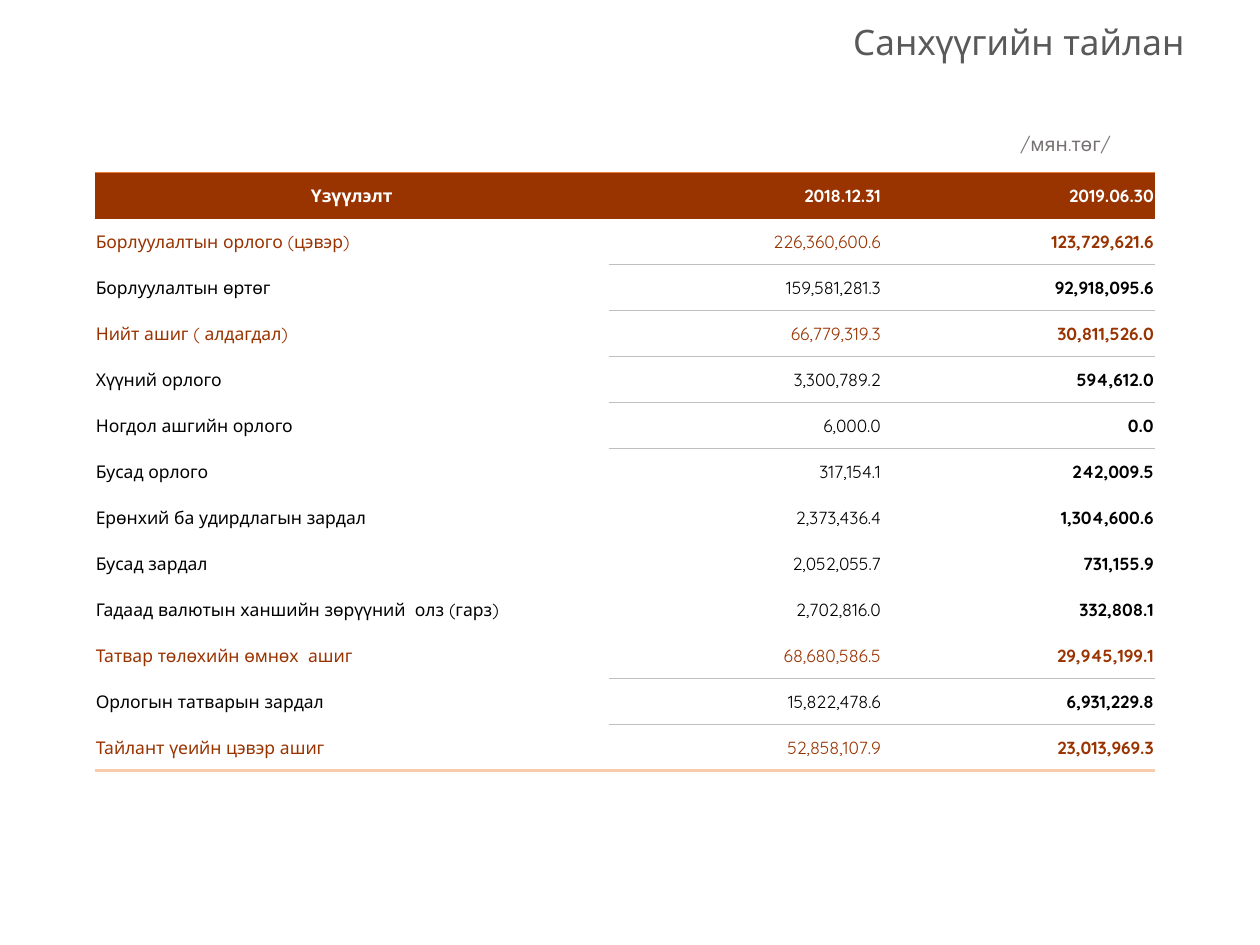
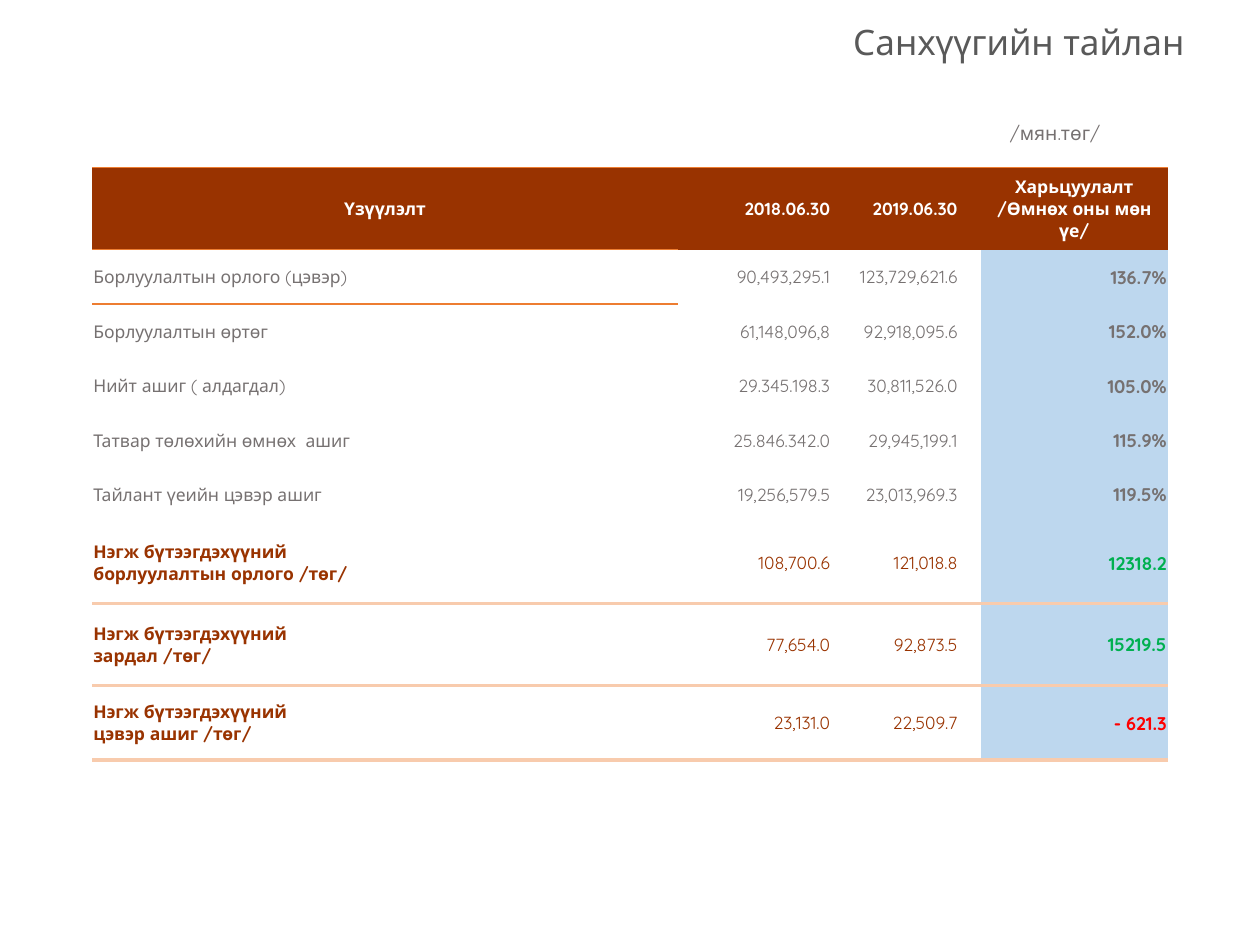
from dataclasses import dataclass

from lxml import etree
from pptx import Presentation
from pptx.dml.color import RGBColor
from pptx.enum.text import MSO_ANCHOR, PP_ALIGN
from pptx.oxml.ns import qn
from pptx.util import Pt

LEFT, CENTER, RIGHT = PP_ALIGN.LEFT, PP_ALIGN.CENTER, PP_ALIGN.RIGHT
TOP, MIDDLE = MSO_ANCHOR.TOP, MSO_ANCHOR.MIDDLE
PLAIN_GRID = "{2D5ABB26-0587-4C30-8999-92F81FD0307C}"


@dataclass(frozen=True)
class Theme:
    font: str = "Quicksand"
    title: str = "595959"
    unit: str = "767171"
    rust: str = "993300"
    orange: str = "ED7D31"
    peach: str = "F8CBAD"
    line: str = "BFBFBF"
    blue: str = "BDD7EE"
    green: str = "00B050"
    red: str = "FF0000"
    white: str = "FFFFFF"
    black: str = "000000"
    title_size: float = 20
    unit_size: float = 11
    cell_size: float = 10
    ratio_size: float = 10.5
    thin: float = 0.75
    edge: float = 1
    thick: float = 2.25


THEME = Theme()

RESULTS = [
    ("Борлуулалтын орлого (цэвэр)", "226,360,600.6", "123,729,621.6"),
    ("Борлуулалтын өртөг", "159,581,281.3", "92,918,095.6"),
    ("Нийт ашиг ( алдагдал)", "66,779,319.3", "30,811,526.0"),
    ("Хүүний орлого", "3,300,789.2", "594,612.0"),
    ("Ногдол ашгийн орлого", "6,000.0", "0.0"),
    ("Бусад орлого", "317,154.1", "242,009.5"),
    ("Ерөнхий ба удирдлагын зардал", "2,373,436.4", "1,304,600.6"),
    ("Бусад зардал", "2,052,055.7", "731,155.9"),
    ("Гадаад валютын ханшийн зөрүүний  олз (гарз)", "2,702,816.0", "332,808.1"),
    ("Татвар төлөхийн өмнөх  ашиг", "68,680,586.5", "29,945,199.1"),
    ("Орлогын татварын зардал", "15,822,478.6", "6,931,229.8"),
    ("Тайлант үеийн цэвэр ашиг", "52,858,107.9", "23,013,969.3"),
]
KEY_ROWS = {1, 3, 10, 12}

CHANGES = [
    ("Борлуулалтын орлого (цэвэр)", "90,493,295.1", "123,729,621.6", "136.7%"),
    ("Борлуулалтын өртөг", "61,148,096,8", "92,918,095.6", "152.0%"),
    ("Нийт ашиг ( алдагдал)", "29.345.198.3", "30,811,526.0", "105.0%"),
    ("Татвар төлөхийн өмнөх  ашиг", "25.846.342.0", "29,945,199.1", "115.9%"),
    ("Тайлант үеийн цэвэр ашиг", "19,256,579.5", "23,013,969.3", "119.5%"),
    ("Нэгж бүтээгдэхүүний\nборлуулалтын орлого /төг/", "108,700.6", "121,018.8", "12318.2"),
    ("Нэгж бүтээгдэхүүний\nзардал /төг/", "77,654.0", "92,873.5", "15219.5"),
    ("Нэгж бүтээгдэхүүний\nцэвэр ашиг /төг/", "23,131.0", "22,509.7", "- 621.3"),
]
UNIT_ROW = 6


def write(frame, text, size, color, bold=False, align=LEFT, pitch=None):
    for i, line in enumerate(text.split("\n")):
        para = frame.add_paragraph() if i else frame.paragraphs[0]
        para.alignment = align
        if pitch:
            para.line_spacing = pitch
        run = para.add_run()
        run.text = line
        run.font.name = THEME.font
        run.font.size = Pt(size)
        run.font.bold = bold
        run.font.color.rgb = RGBColor.from_string(color)


def label(slide, box, text, size, color, align=LEFT, anchor=TOP, pitch=None):
    frame = slide.shapes.add_textbox(*map(Pt, box)).text_frame
    frame.word_wrap = True
    frame.vertical_anchor = anchor
    write(frame, text, size, color, align=align, pitch=pitch)


def page(deck, unit_left, unit_top):
    slide = deck.slides.add_slide(deck.slide_layouts[6])
    label(slide, (432, 6, 252, 38), "Санхүүгийн тайлан", THEME.title_size,
          THEME.title, RIGHT, MIDDLE, 0.9)
    label(slide, (unit_left, unit_top, 90, 21), "/мян.төг/", THEME.unit_size, THEME.unit)
    return slide


def grid(slide, left, top, widths, heights):
    box = map(Pt, (left, top, sum(widths), sum(heights)))
    table = slide.shapes.add_table(len(heights), len(widths), *box).table
    table._tbl.tblPr.find(qn("a:tableStyleId")).text = PLAIN_GRID
    for col, width in zip(table.columns, widths):
        col.width = Pt(width)
    for row, height in zip(table.rows, heights):
        row.height = Pt(height)
    return table


def border(cell, side, rule):
    color, width = rule
    line = etree.SubElement(cell._tc.get_or_add_tcPr(), qn(f"a:ln{side}"), w=str(Pt(width)))
    fill = etree.SubElement(line, qn("a:solidFill"))
    etree.SubElement(fill, qn("a:srgbClr"), val=color)


def paint(cell, fill, above, below):
    cell.margin_left = cell.margin_top = cell.margin_right = Pt(0.75)
    cell.margin_bottom = 0
    cell.vertical_anchor = MIDDLE
    for side, rule in (("T", above), ("B", below)):
        if rule:
            border(cell, side, rule)
    if fill:
        cell.fill.solid()
        cell.fill.fore_color.rgb = RGBColor.from_string(fill)
    else:
        cell.fill.background()


def fill_grid(table, rows, rules, style):
    for r, row in enumerate(rows):
        for c, text in enumerate(row):
            cell = table.cell(r, c)
            fill, size, color, bold, align = style(r, c)
            paint(cell, fill, rules.get((r, c)), rules.get((r + 1, c)))
            if text:
                write(cell.text_frame, text, size, color, bold, align)


def head_style(align):
    return THEME.rust, THEME.cell_size, THEME.white, True, align


def result_style(r, c):
    align = RIGHT if c else LEFT
    if r == 0:
        return head_style(align if c else CENTER)
    color = THEME.rust if r in KEY_ROWS else THEME.black
    return None, THEME.cell_size, color, c == 2, align


def change_style(r, c):
    if r == 0:
        return head_style(CENTER if c in (0, 4) else RIGHT)
    unit = r >= UNIT_ROW
    color = THEME.rust if unit else THEME.unit
    if c == 4:
        if unit:
            color = THEME.red if r == len(CHANGES) else THEME.green
        return THEME.blue, THEME.ratio_size, color, True, RIGHT
    fill = THEME.white if c == 3 else None
    return fill, THEME.cell_size, color, unit and c == 0, RIGHT if c else LEFT


def across(edges, cols, color, width):
    return {(edge, col): (color, width) for edge in edges for col in cols}


def result_page(deck):
    slide = page(deck, 576, 72)
    rows = [("Үзүүлэлт", "2018.12.31", "2019.06.30"), *RESULTS]
    table = grid(slide, 54, 98.6, (294, 156, 156), [26.3] * len(rows))
    rules = (across([0], range(3), THEME.orange, THEME.edge)
             | across((2, 3, 4, 5, 11, 12), (1, 2), THEME.line, THEME.thin)
             | across([len(rows)], range(3), THEME.peach, THEME.thick))
    fill_grid(table, rows, rules, result_style)


def change_page(deck):
    slide = page(deck, 570, 66)
    head = ("Үзүүлэлт", "2018.06.30", "2019.06.30", "", "Харьцуулалт\n/Өмнөх оны мөн үе/")
    rows = [head] + [(name, old, new, "", ratio) for name, old, new, ratio in CHANGES]
    heights = [46.8] + [31.1] * 5 + [46.8] * 2 + [42.6]
    table = grid(slide, 52.6, 95.8, (334.8, 87.6, 72.8, 12.6, 107), heights)
    rules = (across([0], range(5), THEME.orange, THEME.edge)
             | across([1], [0], THEME.orange, THEME.edge)
             | across(range(UNIT_ROW + 1, len(rows) + 1), range(5), THEME.peach, THEME.thick))
    fill_grid(table, rows, rules, change_style)


def main():
    deck = Presentation()
    deck.slide_width, deck.slide_height = Pt(720), Pt(540)
    result_page(deck)
    change_page(deck)
    deck.save("out.pptx")


if __name__ == "__main__":
    main()
